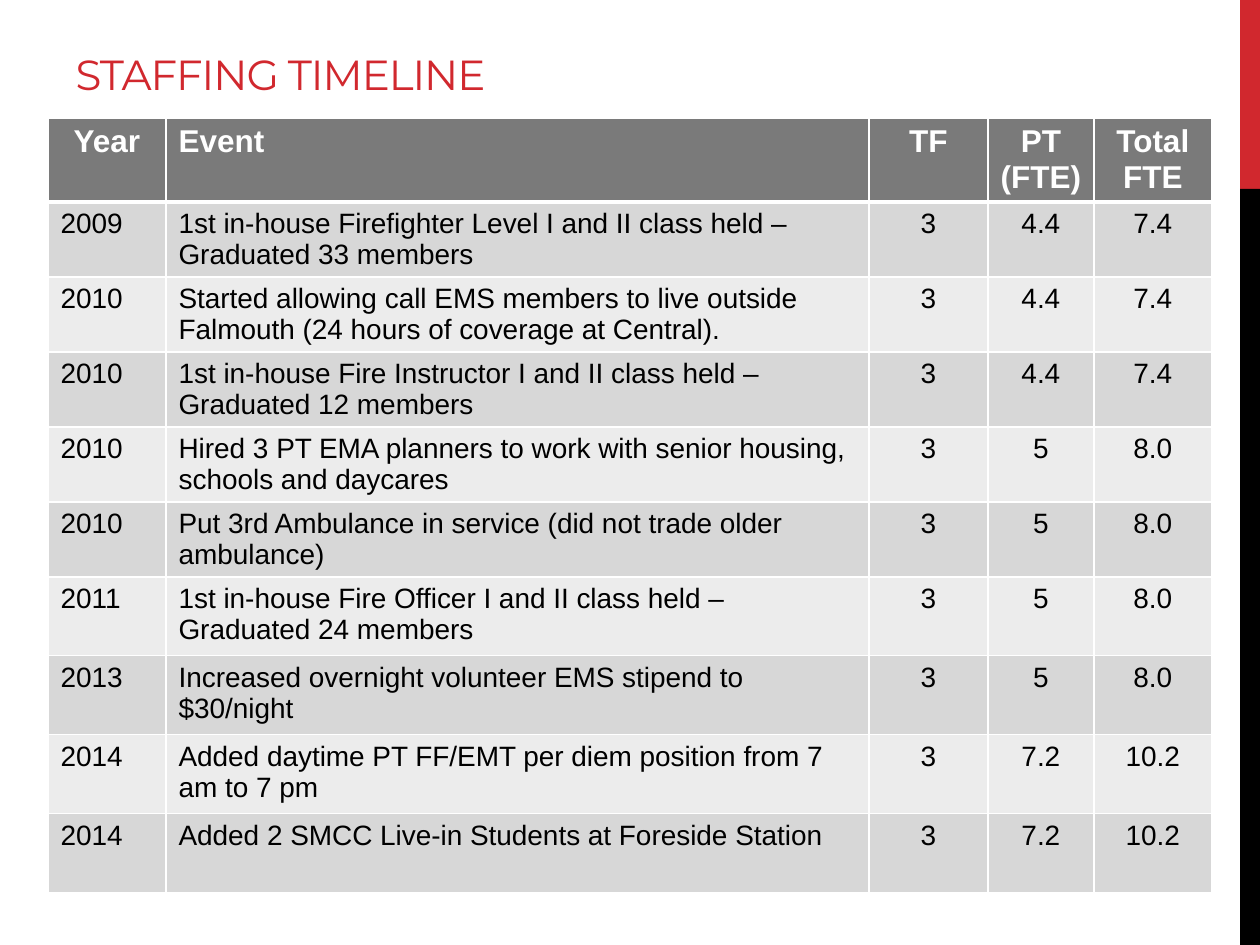
import dataclasses

import pptx
import pptx.dml.color
import pptx.enum.shapes
import pptx.enum.text
import pptx.oxml
import pptx.oxml.ns
import pptx.util

PX = 914400 / 126
RED, BLACK, WHITE = "D1282E", "000000", "FFFFFF"
HEADER_FILL, BAND_FILLS = "7A7A7A", ("D7D7D7", "ECECEC")
ALIGN = pptx.enum.text.PP_ALIGN


@dataclasses.dataclass(frozen=True)
class Box:
    left: int
    top: int
    width: int
    height: int

    def emu(self) -> list[int]:
        return [px(value) for value in dataclasses.astuple(self)]


@dataclasses.dataclass(frozen=True)
class Column:
    heading: str
    width: int
    heading_align: ALIGN
    body_align: ALIGN


@dataclasses.dataclass(frozen=True)
class StaffingEvent:
    year: str
    event: str
    full_time: str
    part_time: str
    total: str
    height: int = 75


@dataclasses.dataclass(frozen=True)
class CellStyle:
    fill: str
    color: str
    size: int
    bold: bool
    bottom_line: int = 1


COLUMNS = [
    Column("Year", 118, ALIGN.CENTER, ALIGN.LEFT),
    Column("Event", 703, ALIGN.LEFT, ALIGN.LEFT),
    Column("TF", 119, ALIGN.CENTER, ALIGN.CENTER),
    Column("PT (FTE)", 106, ALIGN.CENTER, ALIGN.CENTER),
    Column("Total FTE", 118, ALIGN.CENTER, ALIGN.CENTER),
]
EVENTS = [
    StaffingEvent("2009", "1st in-house Firefighter Level I and II class held – Graduated 33 members",
                  "3", "4.4", "7.4"),
    StaffingEvent("2010", "Started allowing call EMS members to live outside Falmouth "
                  "(24 hours of coverage at Central).", "3", "4.4", "7.4"),
    StaffingEvent("2010", "1st in-house Fire Instructor I and II class held – Graduated 12 members",
                  "3", "4.4", "7.4"),
    StaffingEvent("2010", "Hired 3 PT EMA planners to work with senior housing, schools and daycares",
                  "3", "5", "8.0"),
    StaffingEvent("2010", "Put 3rd Ambulance in service (did not trade older ambulance)",
                  "3", "5", "8.0"),
    StaffingEvent("2011", "1st in-house Fire Officer I and II class held – Graduated 24 members",
                  "3", "5", "8.0", 79),
    StaffingEvent("2013", "Increased overnight volunteer EMS stipend to $30/night",
                  "3", "5", "8.0", 79),
    StaffingEvent("2014", "Added daytime PT FF/EMT per diem position from 7 am to 7 pm",
                  "3", "7.2", "10.2", 79),
    StaffingEvent("2014", "Added 2 SMCC Live-in Students at Foreside Station",
                  "3", "7.2", "10.2", 79),
]
HEADER_HEIGHT = 84


def px(value: int) -> int:
    return round(value * PX)


def rgb(color: str) -> pptx.dml.color.RGBColor:
    return pptx.dml.color.RGBColor.from_string(color)


def add_bar(slide, box: Box, color: str) -> None:
    bar = slide.shapes.add_shape(pptx.enum.shapes.MSO_SHAPE.RECTANGLE, *box.emu())
    bar.shadow.inherit = False
    bar.fill.solid()
    bar.fill.fore_color.rgb = rgb(color)
    bar.line.fill.background()


def format_run(run, font_name: str, size: int, color: str, bold: bool = False) -> None:
    run.font.name = font_name
    run.font.size = pptx.util.Pt(size)
    run.font.bold = bold
    run.font.color.rgb = rgb(color)


def set_title(slide, box: Box, text: str) -> None:
    title = slide.shapes.title
    title.left, title.top, title.width, title.height = box.emu()
    title.text_frame.text = text
    title.text_frame.vertical_anchor = pptx.enum.text.MSO_ANCHOR.BOTTOM
    paragraph = title.text_frame.paragraphs[0]
    paragraph.alignment = ALIGN.LEFT
    run = paragraph.runs[0]
    format_run(run, "Montserrat", 24, RED)
    run.font._element.set("spc", "-60")


def set_borders(cell, bottom_line: int) -> None:
    """Put white lines before the fill, in the order the schema asks for."""
    properties = cell._tc.get_or_add_tcPr()
    namespace = pptx.oxml.ns.nsdecls("a")
    for index, (side, points) in enumerate([("L", 1), ("R", 1), ("T", 1), ("B", bottom_line)]):
        line = pptx.oxml.parse_xml(
            f'<a:ln{side} {namespace} w="{pptx.util.Pt(points)}"><a:solidFill>'
            f'<a:srgbClr val="{WHITE}"/></a:solidFill></a:ln{side}>')
        properties.insert(index, line)


def fill_cell(cell, text: str, align: ALIGN, style: CellStyle) -> None:
    cell.text_frame.text = text
    paragraph = cell.text_frame.paragraphs[0]
    paragraph.alignment = align
    format_run(paragraph.runs[0], "Arial", style.size, style.color, style.bold)
    cell.fill.solid()
    cell.fill.fore_color.rgb = rgb(style.fill)
    set_borders(cell, style.bottom_line)


def add_staffing_table(slide, left: int, top: int) -> None:
    heights = [HEADER_HEIGHT] + [event.height for event in EVENTS]
    box = Box(left, top, sum(column.width for column in COLUMNS), sum(heights))
    table = slide.shapes.add_table(len(heights), len(COLUMNS), *box.emu()).table
    for row, height in zip(table.rows, heights):
        row.height = px(height)
    header_style = CellStyle(HEADER_FILL, WHITE, 18, True, bottom_line=3)
    for column_index, column in enumerate(COLUMNS):
        table.columns[column_index].width = px(column.width)
        fill_cell(table.cell(0, column_index), column.heading, column.heading_align, header_style)
    for row_index, event in enumerate(EVENTS):
        style = CellStyle(BAND_FILLS[row_index % 2], BLACK, 16, False,)
        values = (event.year, event.event, event.full_time, event.part_time, event.total)
        for column_index, (column, value) in enumerate(zip(COLUMNS, values)):
            fill_cell(table.cell(row_index + 1, column_index), value, column.body_align, style)
    for column_index in range(len(COLUMNS)):
        top_line = table.cell(1, column_index)._tc.tcPr.find(pptx.oxml.ns.qn("a:lnT"))
        top_line.set("w", str(pptx.util.Pt(header_style.bottom_line)))


def main() -> None:
    presentation = pptx.Presentation()
    presentation.slide_width, presentation.slide_height = px(1260), px(945)
    slide = presentation.slides.add_slide(presentation.slide_layouts[5])
    add_bar(slide, Box(1240, 0, 20, 189), RED)
    add_bar(slide, Box(1240, 189, 20, 756), BLACK)
    set_title(slide, Box(63, 21, 798, 84), "STAFFING TIMELINE")
    add_staffing_table(slide, 48, 118)
    presentation.save("out.pptx")


if __name__ == "__main__":
    main()
